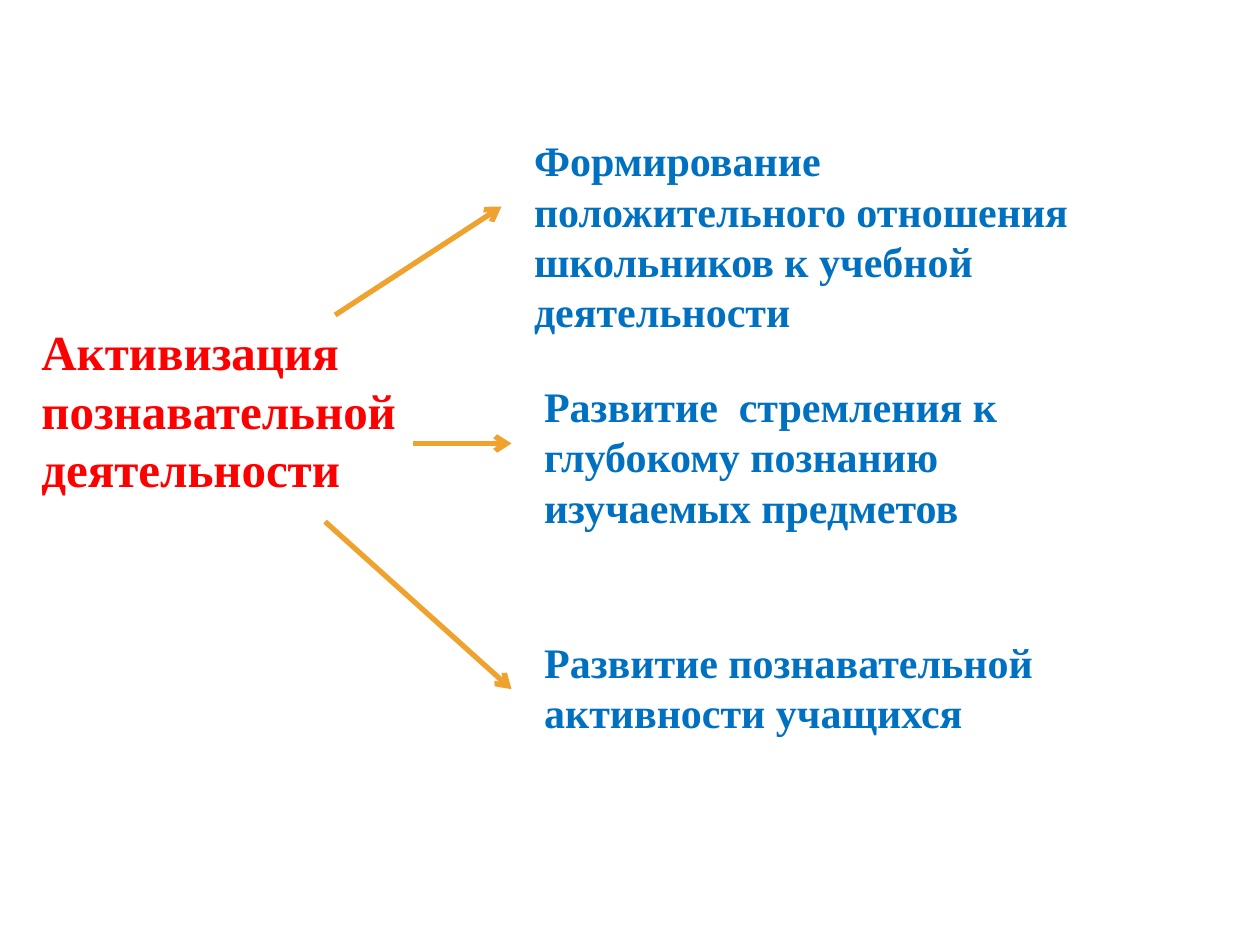
from dataclasses import dataclass

from lxml.etree import SubElement
from pptx import Presentation
from pptx.dml.color import RGBColor
from pptx.enum.shapes import MSO_CONNECTOR
from pptx.enum.text import MSO_AUTO_SIZE
from pptx.oxml.ns import qn
from pptx.util import Inches, Pt


@dataclass(frozen=True)
class Theme:
    font: str = "Times New Roman"
    topic_color: RGBColor = RGBColor(0xFF, 0x00, 0x00)
    goal_color: RGBColor = RGBColor(0x00, 0x70, 0xC0)
    arrow_color: RGBColor = RGBColor(0xF0, 0xA2, 0x2E)
    topic_size: Pt = Pt(28)
    goal_size: Pt = Pt(24)
    arrow_width: Pt = Pt(3)


THEME = Theme()

TOPIC = "Активизация\nпознавательной\nдеятельности"
GOALS = [
    ("Формирование положительного отношения школьников к учебной деятельности",
     (4.14, 1.02, 5, 1.72), True),
    ("Развитие  стремления к глубокому познанию изучаемых предметов",
     (4.22, 2.97, 5, 1.31), True),
    ("Развитие познавательной\nактивности учащихся",
     (4.22, 5, 4.21, 0.91), False),
]
ARROWS = [
    (2.66, 2.5, 3.98, 1.64),
    (3.28, 3.52, 4.06, 3.52),
    (2.58, 4.14, 4.06, 5.47),
]


def add_label(s, text, box, size, color, wrap=True):
    sp = s.shapes.add_textbox(*map(Inches, box))
    tf = sp.text_frame
    tf.word_wrap = wrap
    tf.auto_size = MSO_AUTO_SIZE.SHAPE_TO_FIT_TEXT
    tf.text = text
    for p in tf.paragraphs:
        for r in p.runs:
            r.font.name = THEME.font
            r.font.size = size
            r.font.bold = True
            r.font.color.rgb = color


def add_arrow(s, ends):
    sp = s.shapes.add_connector(MSO_CONNECTOR.STRAIGHT, *map(Inches, ends))
    sp.line.color.rgb = THEME.arrow_color
    sp.line.width = THEME.arrow_width
    SubElement(sp.line._get_or_add_ln(), qn("a:tailEnd"), type="arrow")
    SubElement(sp._element.spPr, qn("a:effectLst"))


def main():
    prs = Presentation()
    prs.slide_width, prs.slide_height = Inches(10), Inches(7.5)
    s = prs.slides.add_slide(prs.slide_layouts[6])
    add_label(s, TOPIC, (0.23, 2.5, 3.28, 1.51), THEME.topic_size, THEME.topic_color)
    for text, box, wrap in GOALS:
        add_label(s, text, box, THEME.goal_size, THEME.goal_color, wrap)
    for ends in ARROWS:
        add_arrow(s, ends)
    prs.save("out.pptx")


if __name__ == "__main__":
    main()
